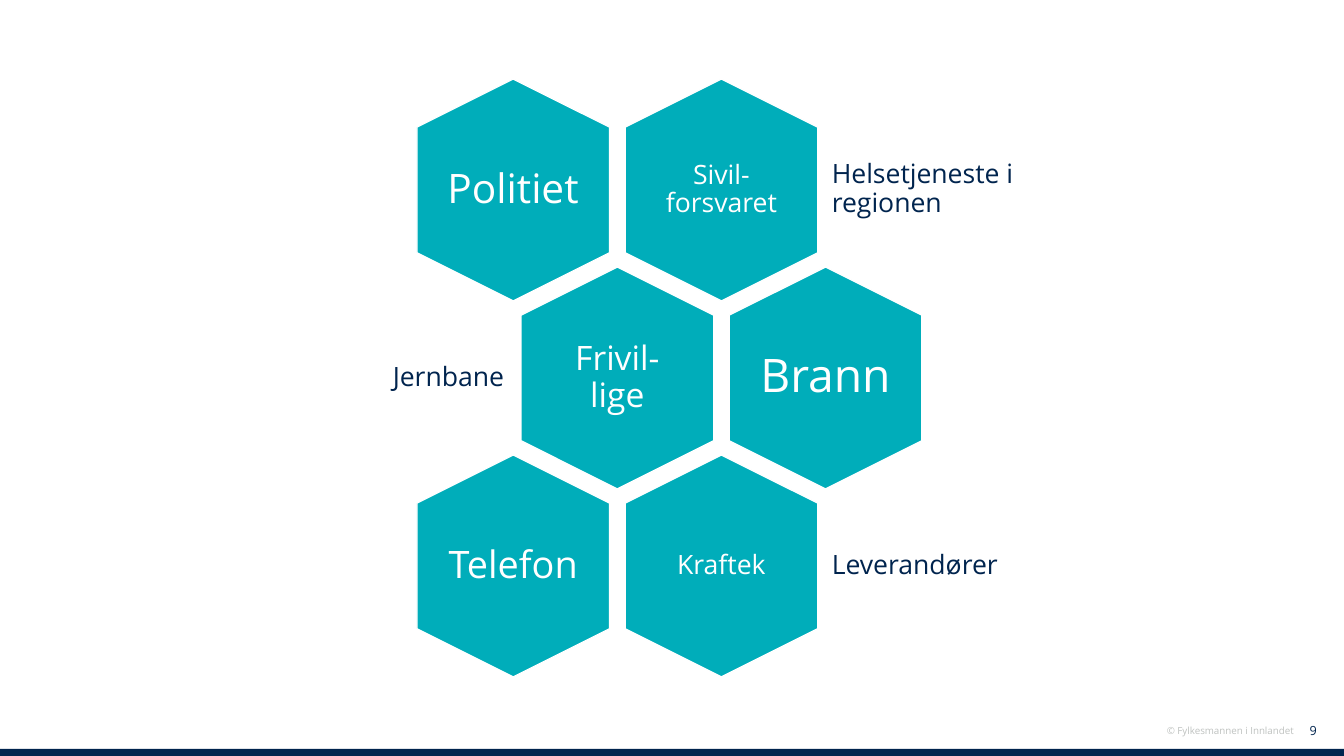
from pptx import Presentation
from pptx.dml.color import RGBColor
from pptx.enum import shapes, text
from pptx.util import Inches, Pt

COLORS = {"navy": "00244E", "teal": "00ADBA", "white": "FFFFFF", "gray": "BFC2C0"}
FONT = "Open Sans"

HEX_LENGTH, HEX_WIDTH = 2.2, 1.91
GRID_LEFT, GRID_TOP = 3.99, 0.93
COLUMN_STEP, ROW_STEP = 4.13 / 2, 3.73 / 2

# column, row, wording, text size, inset
CELLS = [
    (1, 0, "Sivil-forsvaret", 19, 0.08),
    (0, 0, "Politiet", 29, 0),
    (0.5, 1, "Frivil-lige", 24, 0.1),
    (1.5, 1, "Brann", 33, 0),
    (1, 2, "Kraftek", 19, 0.08),
    (0, 2, "Telefon", 27, 0),
]
# left, width, row, wording, alignment
SIDE_LABELS = [
    (8.17, 2.45, 0, "Helsetjeneste i regionen", text.PP_ALIGN.LEFT),
    (2.71, 2.37, 1, "Jernbane", text.PP_ALIGN.RIGHT),
    (8.17, 2.45, 2, "Leverandører", text.PP_ALIGN.LEFT),
]


def color(name):
    return RGBColor.from_string(COLORS[name])


def row_top(row):
    return GRID_TOP + row * ROW_STEP


def add_label(slide, box, wording, size, ink, align, inset=0.08, spacing=0.9):
    label = slide.shapes.add_textbox(*map(Inches, box))
    frame = label.text_frame
    frame.word_wrap = True
    frame.vertical_anchor = text.MSO_ANCHOR.MIDDLE
    frame.margin_left = frame.margin_right = Inches(inset)
    frame.margin_top = frame.margin_bottom = Inches(inset)
    frame.text = wording
    paragraph = frame.paragraphs[0]
    paragraph.alignment = align
    paragraph.line_spacing = spacing
    font = paragraph.runs[0].font
    font.name = FONT
    font.size = Pt(size)
    font.color.rgb = color(ink)


def add_filled_shape(slide, kind, box, fill):
    shape = slide.shapes.add_shape(kind, *map(Inches, box))
    shape.shadow.inherit = False
    shape.fill.solid()
    shape.fill.fore_color.rgb = color(fill)
    shape.line.fill.background()
    return shape


def add_cell(slide, column, row, wording, size, inset):
    """Add an upright hexagon with its centred caption."""
    left = GRID_LEFT + column * COLUMN_STEP
    top = row_top(row)
    hexagon = add_filled_shape(slide, shapes.MSO_SHAPE.HEXAGON,
                               (left, top, HEX_LENGTH, HEX_WIDTH), "teal")
    hexagon.rotation = 90
    hexagon.adjustments[0] = 0.25
    hexagon.line.color.rgb = color("white")
    hexagon.line.width = Pt(0.85)
    add_label(slide, (left + 0.44, top + 0.2, 1.32, 1.51), wording, size,
              "white", text.PP_ALIGN.CENTER, inset)


def add_footer(slide):
    add_filled_shape(slide, shapes.MSO_SHAPE.RECTANGLE, (0, 7.43, 13.33, 0.08), "navy")
    right = text.PP_ALIGN.RIGHT
    add_label(slide, (12.62, 7.12, 0.54, 0.26), "9", 9, "navy", right, 0.1, 1)
    add_label(slide, (10.85, 7.14, 2.08, 0.22), "© Fylkesmannen i Innlandet",
              7, "gray", right, 0.1, 1)


def main():
    presentation = Presentation()
    presentation.slide_width = Inches(13.33)
    presentation.slide_height = Inches(7.5)
    slide = presentation.slides.add_slide(presentation.slide_layouts[6])
    add_footer(slide)
    for cell in CELLS:
        add_cell(slide, *cell)
    for left, width, row, wording, align in SIDE_LABELS:
        add_label(slide, (left, row_top(row) + 0.29, width, 1.32), wording,
                  19, "navy", align)
    presentation.save("out.pptx")


if __name__ == "__main__":
    main()
